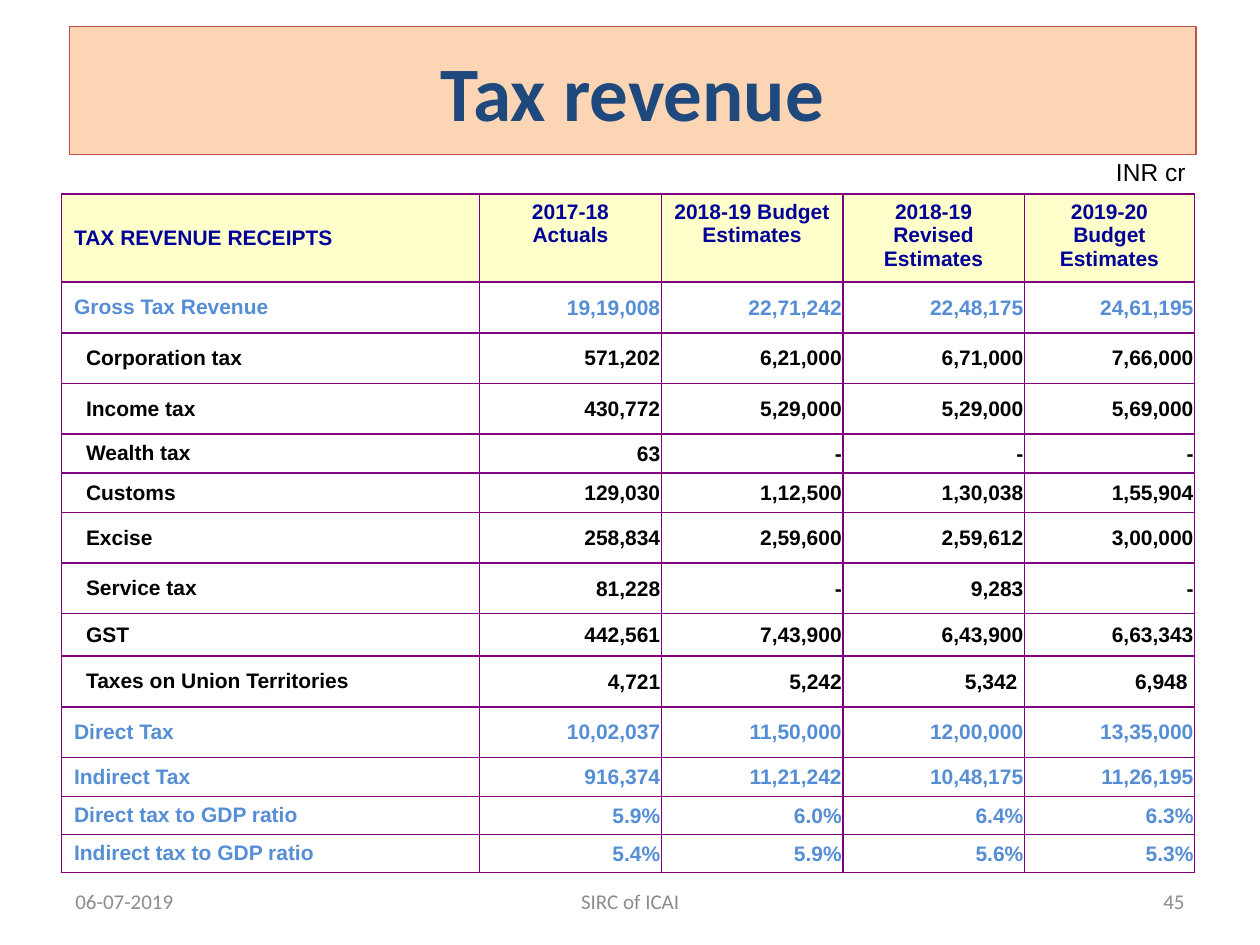
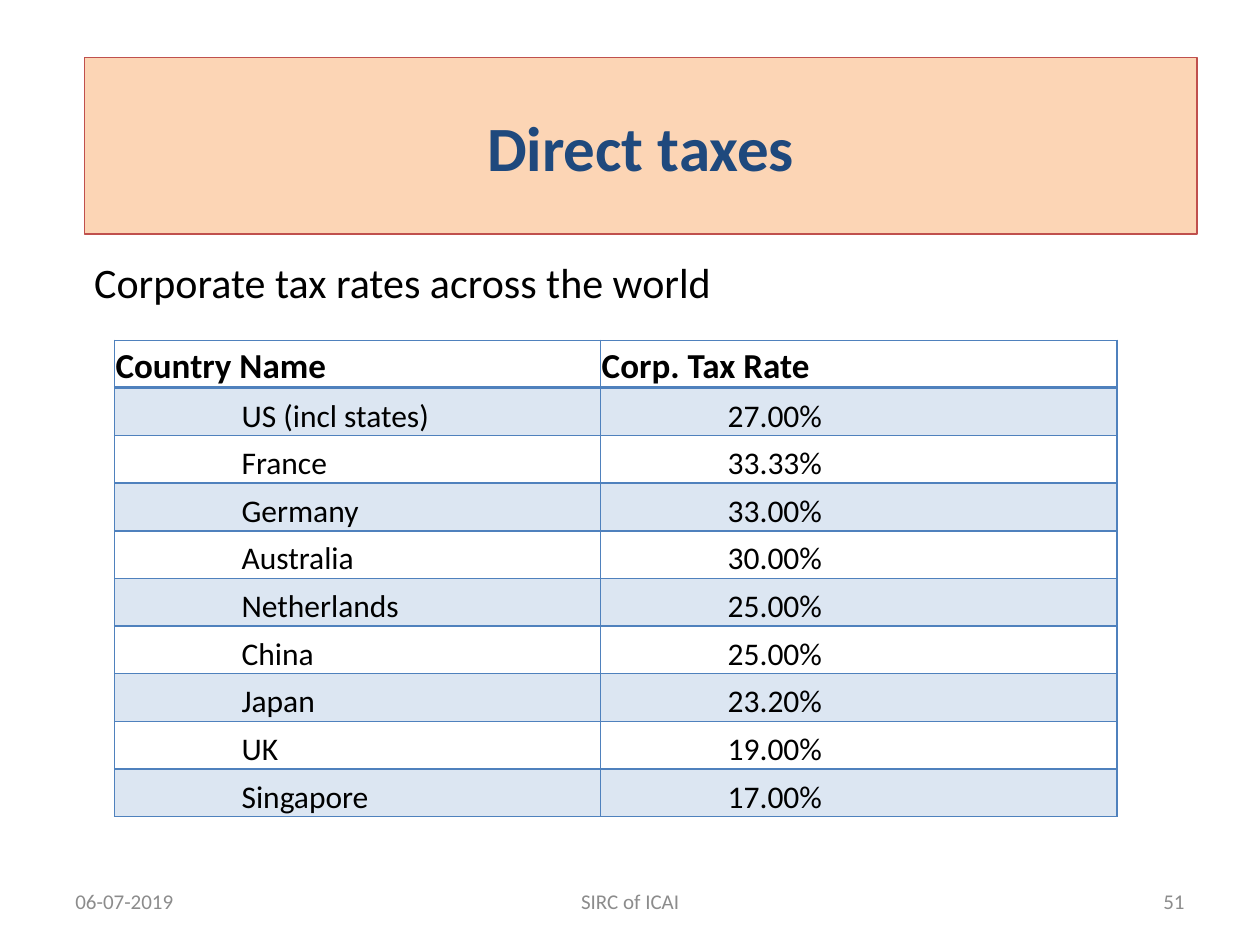
from dataclasses import dataclass

import lxml.etree
import pptx
import pptx.dml.color
import pptx.enum.text
import pptx.oxml.ns
import pptx.util

Cm = pptx.util.Cm
Pt = pptx.util.Pt
ALIGN = pptx.enum.text.PP_ALIGN
ANCHOR = pptx.enum.text.MSO_ANCHOR

COLOURS = {
    "title_fill": "FCD5B5",
    "title_line": "C0504D",
    "title_text": "1F497D",
    "text": "000000",
    "footer": "8C8C8C",
    "header_fill": "FFFFCC",
    "header_text": "000099",
    "total_text": "558ED5",
    "revenue_border": "800080",
    "rates_border": "4F81BD",
    "rates_band": "DCE6F2",
}


@dataclass(frozen=True)
class Box:
    left: float
    top: float
    width: float
    height: float

    def lengths(self) -> tuple:
        return tuple(Cm(value) for value in (self.left, self.top, self.width, self.height))


@dataclass(frozen=True)
class TextStyle:
    size: int
    colour: str
    font: str = "Calibri"
    bold: bool = False
    align: ALIGN = ALIGN.LEFT
    anchor: ANCHOR = ANCHOR.TOP


@dataclass(frozen=True)
class CellStyle:
    text: TextStyle
    border: str
    fill: str | None = None
    top_width: float = 1
    bottom_width: float = 1
    tight: bool = True
    level: int = 0
    indent: float = 0


@dataclass(frozen=True)
class RevenueRow:
    height: float
    label: str
    values: tuple[str, ...]
    total: bool = False
    padded_columns: tuple[int, ...] = ()


TITLE_ALIGNMENT = {"align": ALIGN.CENTER, "anchor": ANCHOR.MIDDLE}
FOOTER_TOP, FOOTER_HEIGHT = 17.65, 1.02

REVENUE_COLUMNS = (8.43, 3.66, 3.66, 3.66, 3.43)
REVENUE_HEADER_HEIGHT = 1.75
REVENUE_HEADERS = (
    "TAX REVENUE RECEIPTS",
    "2017-18 Actuals",
    "2018-19 Budget\nEstimates",
    "2018-19 Revised\nEstimates",
    "2019-20 Budget\nEstimates",
)
REVENUE_ROWS = (
    RevenueRow(1.02, "Gross Tax Revenue", ("19,19,008", "22,71,242", "22,48,175", "24,61,195"), True),
    RevenueRow(1.02, "Corporation tax", ("571,202", "6,21,000", "6,71,000", "7,66,000")),
    RevenueRow(1.02, "Income tax", ("430,772", "5,29,000", "5,29,000", "5,69,000")),
    RevenueRow(0.79, "Wealth tax", ("63", "-", "-", "-")),
    RevenueRow(0.79, "Customs", ("129,030", "1,12,500", "1,30,038", "1,55,904")),
    RevenueRow(1.02, "Excise", ("258,834", "2,59,600", "2,59,612", "3,00,000")),
    RevenueRow(1.02, "Service tax", ("81,228", "-", "9,283", "-")),
    RevenueRow(0.86, "GST", ("442,561", "7,43,900", "6,43,900", "6,63,343")),
    RevenueRow(1.02, "Taxes on Union Territories", ("4,721", "5,242", "5,342", "6,948"), padded_columns=(3, 4)),
    RevenueRow(1.02, "Direct Tax", ("10,02,037", "11,50,000", "12,00,000", "13,35,000"), True),
    RevenueRow(0.79, "Indirect Tax", ("916,374", "11,21,242", "10,48,175", "11,26,195"), True),
    RevenueRow(0.75, "Direct tax to GDP ratio", ("5.9%", "6.0%", "6.4%", "6.3%"), True),
    RevenueRow(0.75, "Indirect tax to GDP ratio", ("5.4%", "5.9%", "5.6%", "5.3%"), True),
)

RATES_COLUMNS = (9.8, 10.41)
RATES_ROW_HEIGHT = 0.96
RATES = (
    ("Country Name", "Corp. Tax Rate"),
    ("US (incl states)", "27.00%"),
    ("France", "33.33%"),
    ("Germany", "33.00%"),
    ("Australia", "30.00%"),
    ("Netherlands", "25.00%"),
    ("China", "25.00%"),
    ("Japan", "23.20%"),
    ("UK", "19.00%"),
    ("Singapore", "17.00%"),
)


def colour(name: str) -> pptx.dml.color.RGBColor:
    return pptx.dml.color.RGBColor.from_string(COLOURS[name])


def write_text(text_frame, text: str, style: TextStyle) -> None:
    text_frame.text = text
    text_frame.word_wrap = True
    for paragraph in text_frame.paragraphs:
        paragraph.alignment = style.align
        for run in paragraph.runs:
            run.font.name = style.font
            run.font.size = Pt(style.size)
            run.font.bold = style.bold
            run.font.color.rgb = colour(style.colour)


def add_text(slide, box: Box, text: str, style: TextStyle):
    text_frame = slide.shapes.add_textbox(*box.lengths()).text_frame
    write_text(text_frame, text, style)
    text_frame.vertical_anchor = style.anchor
    return text_frame


def add_titled_slide(presentation, title: str, box: Box, size: int, number: str):
    slide = presentation.slides.add_slide(presentation.slide_layouts[5])
    shape = slide.shapes.title
    shape.left, shape.top, shape.width, shape.height = box.lengths()
    shape.fill.solid()
    shape.fill.fore_color.rgb = colour("title_fill")
    shape.line.color.rgb = colour("title_line")
    shape.line.width = Pt(0.75)
    write_text(shape.text_frame, title, TextStyle(size, "title_text", bold=True, **TITLE_ALIGNMENT))
    shape.text_frame.vertical_anchor = ANCHOR.MIDDLE
    for left, width, text, align in (
        (1.27, 5.93, "06-07-2019", ALIGN.LEFT),
        (8.68, 8.05, "SIRC of ICAI", ALIGN.CENTER),
        (18.2, 5.93, number, ALIGN.RIGHT),
    ):
        style = TextStyle(12, "footer", align=align, anchor=ANCHOR.MIDDLE)
        add_text(slide, Box(left, FOOTER_TOP, width, FOOTER_HEIGHT), text, style)
    return slide


def add_grid(slide, left: float, top: float, columns: tuple, rows: tuple):
    box = Box(left, top, sum(columns), sum(rows))
    table = slide.shapes.add_table(len(rows), len(columns), *box.lengths()).table
    table.first_row = False
    table.horz_banding = False
    for column, width in zip(table.columns, columns):
        column.width = Cm(width)
    for row, height in zip(table.rows, rows):
        row.height = Cm(height)
    return table


def draw_borders(cell, style: CellStyle) -> None:
    properties = cell._tc.get_or_add_tcPr()
    qualified = pptx.oxml.ns.qn
    widths = {"lnL": 1, "lnR": 1, "lnT": style.top_width, "lnB": style.bottom_width}
    for side, width in widths.items():
        line = lxml.etree.SubElement(properties, qualified(f"a:{side}"), w=str(Pt(width)))
        fill = lxml.etree.SubElement(line, qualified("a:solidFill"))
        lxml.etree.SubElement(fill, qualified("a:srgbClr"), val=COLOURS[style.border])


def fill_cell(cell, text: str, style: CellStyle) -> None:
    draw_borders(cell, style)
    if style.fill:
        cell.fill.solid()
        cell.fill.fore_color.rgb = colour(style.fill)
    else:
        cell.fill.background()
    if style.tight:
        cell.margin_left = cell.margin_right = cell.margin_top = Cm(0.02)
        cell.margin_bottom = 0
    write_text(cell.text_frame, text, style.text)
    cell.vertical_anchor = style.text.anchor
    for paragraph in cell.text_frame.paragraphs:
        paragraph.level = style.level
        if style.indent:
            properties = paragraph._p.get_or_add_pPr()
            properties.set("marL", str(Cm(style.indent)))
            properties.set("indent", "0")


def revenue_cell(text_colour: str, **options) -> CellStyle:
    align = options.pop("align", ALIGN.LEFT)
    anchor = options.pop("anchor", ANCHOR.MIDDLE)
    text = TextStyle(12, text_colour, "Arial", True, align, anchor)
    return CellStyle(text, "revenue_border", **options)


def build_tax_revenue(presentation) -> None:
    slide = add_titled_slide(presentation, "Tax revenue", Box(1.4, 0.53, 22.71, 2.59), 44, "45")
    heights = (REVENUE_HEADER_HEIGHT, *(row.height for row in REVENUE_ROWS))
    table = add_grid(slide, 1.24, 3.91, REVENUE_COLUMNS, heights)
    for index, header in enumerate(REVENUE_HEADERS):
        placing = {"align": ALIGN.CENTER, "anchor": ANCHOR.TOP} if index else {}
        style = revenue_cell("header_text", fill="header_fill", tight=False, **placing)
        fill_cell(table.cell(0, index), header, style)
    for row_index, row in enumerate(REVENUE_ROWS, 1):
        text_colour = "total_text" if row.total else "text"
        label_style = revenue_cell(text_colour, tight=False, indent=0 if row.total else 0.24)
        fill_cell(table.cell(row_index, 0), row.label, label_style)
        for column_index, value in enumerate(row.values, 1):
            cell = table.cell(row_index, column_index)
            fill_cell(cell, value, revenue_cell(text_colour, align=ALIGN.RIGHT))
            if column_index in row.padded_columns:
                cell.margin_right = Cm(0.14)
    add_text(slide, Box(18.87, 3.05, 5.28, 0.86), "INR cr", TextStyle(14, "text", "Arial", align=ALIGN.RIGHT))


def build_direct_taxes(presentation) -> None:
    slide = add_titled_slide(presentation, "Direct taxes", Box(1.7, 1.16, 22.43, 3.56), 36, "51")
    table = add_grid(slide, 2.31, 6.86, RATES_COLUMNS, (RATES_ROW_HEIGHT,) * len(RATES))
    header_text = TextStyle(20, "text", bold=True, anchor=ANCHOR.BOTTOM)
    body_text = TextStyle(18, "text", anchor=ANCHOR.BOTTOM)
    for row_index, row in enumerate(RATES):
        if row_index == 0:
            style = CellStyle(header_text, "rates_border", bottom_width=2)
        else:
            style = CellStyle(
                body_text,
                "rates_border",
                fill="rates_band" if row_index % 2 else None,
                top_width=2 if row_index == 1 else 1,
                level=2,
                indent=2.54,
            )
        for column_index, text in enumerate(row):
            fill_cell(table.cell(row_index, column_index), text, style)
    subtitle_style = TextStyle(24, "text", align=ALIGN.JUSTIFY)
    subtitle = add_text(slide, Box(1.65, 5.05, 22.48, 1.27), "Corporate tax rates across the world", subtitle_style)
    subtitle.paragraphs[0].space_before = Pt(5)


def main() -> None:
    presentation = pptx.Presentation()
    presentation.slide_width = Cm(25.4)
    presentation.slide_height = Cm(19.05)
    build_tax_revenue(presentation)
    build_direct_taxes(presentation)
    presentation.save("out.pptx")


if __name__ == "__main__":
    main()
